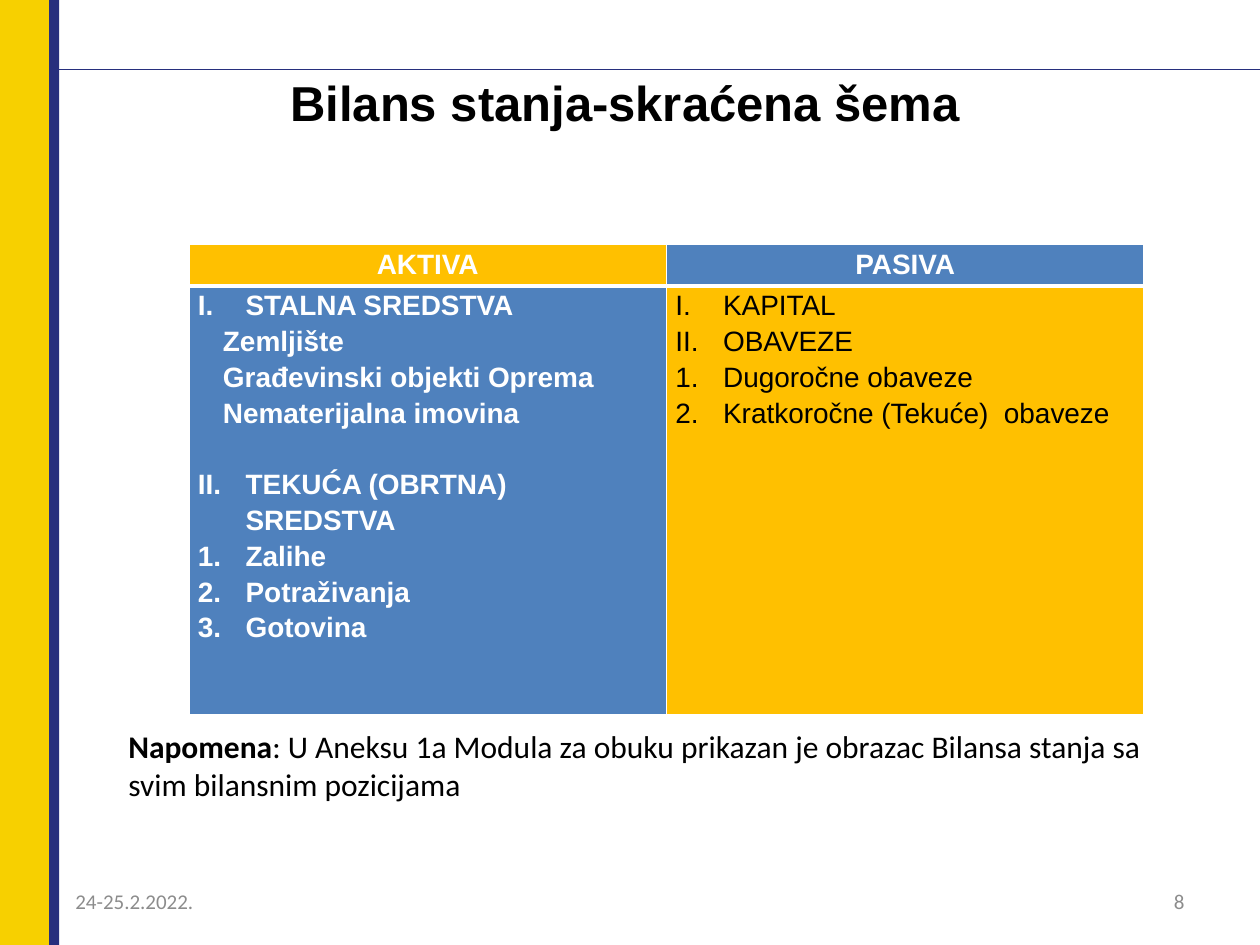
from lxml.etree import SubElement
from pptx import Presentation
from pptx.dml.color import RGBColor
from pptx.enum.shapes import MSO_CONNECTOR, MSO_SHAPE
from pptx.enum.text import MSO_ANCHOR, PP_ALIGN
from pptx.oxml.ns import qn
from pptx.util import Inches, Pt

YELLOW = RGBColor(0xF7, 0xD0, 0x00)
NAVY = RGBColor(0x27, 0x2F, 0x7D)
GOLD = RGBColor(0xFF, 0xC0, 0x00)
BLUE = RGBColor(0x4F, 0x81, 0xBD)
WHITE = RGBColor(0xFF, 0xFF, 0xFF)
BLACK = RGBColor(0, 0, 0)
GREY = RGBColor(0x8C, 0x8C, 0x8C)

ROMAN, ARABIC = "romanUcPeriod", "arabicPeriod"
# Each item: text, numbering scheme, number
ASSETS = [
    ("STALNA SREDSTVA", ROMAN, 1),
    ("Zemljište", None, None),
    ("Građevinski objekti Oprema", None, None),
    ("Nematerijalna imovina", None, None),
    ("TEKUĆA (OBRTNA) SREDSTVA", ROMAN, 2),
    ("Zalihe", ARABIC, 1),
    ("Potraživanja", ARABIC, 2),
    ("Gotovina", ARABIC, 3),
]
LIABILITIES = [
    ("KAPITAL", ROMAN, 1),
    ("OBAVEZE", ROMAN, 2),
    ("Dugoročne obaveze", ARABIC, 1),
    ("Kratkoročne (Tekuće)  obaveze", ARABIC, 2),
]


def add_run(p, text, font, size, color, bold=False):
    r = p.add_run()
    r.text = text
    r.font.name, r.font.size, r.font.bold = font, Pt(size), bold
    r.font.color.rgb = color


def add_frame(s):
    """Coloured side bands and the rule across the top."""
    for left, width, color in ((0, 0.39, YELLOW), (0.39, 0.08, NAVY)):
        band = s.shapes.add_shape(MSO_SHAPE.RECTANGLE, Inches(left), 0,
                                  Inches(width), Inches(7.5))
        band.shadow.inherit = False
        band.fill.solid()
        band.fill.fore_color.rgb = color
        band.line.fill.background()
    rule = s.shapes.add_connector(MSO_CONNECTOR.STRAIGHT, Inches(0.39),
                                  Inches(0.55), Inches(10), Inches(0.55))
    rule.line.color.rgb = NAVY
    rule.line.width = Pt(0.75)
    SubElement(rule._element.spPr, qn("a:effectLst"))


def add_title(s, left, top, width, height):
    title = s.shapes.title
    title.left, title.top = Inches(left), Inches(top)
    title.width, title.height = Inches(width), Inches(height)
    tf = title.text_frame
    tf.vertical_anchor = MSO_ANCHOR.MIDDLE
    p = tf.paragraphs[0]
    p.alignment = PP_ALIGN.CENTER
    add_run(p, "Bilans stanja-skraćena šema", "Arial", 28, BLACK, True)


def style_cell(cell, fill, top, bottom):
    """Set margins, white borders (top and bottom in points) and fill."""
    cell.margin_left = cell.margin_right = Inches(0.07)
    cell.margin_top = cell.margin_bottom = 0
    tcPr = cell._tc.get_or_add_tcPr()
    for side, width in (("L", 1), ("R", 1), ("T", top), ("B", bottom)):
        ln = SubElement(tcPr, qn(f"a:ln{side}"), w=str(Pt(width)))
        color = SubElement(ln, qn("a:solidFill"))
        SubElement(color, qn("a:srgbClr"), val=str(WHITE))
    cell.fill.solid()
    cell.fill.fore_color.rgb = fill


def indent(p, margin, first=0):
    pPr = p._p.get_or_add_pPr()
    pPr.set("marL", str(Inches(margin)))
    pPr.set("indent", str(Inches(first)))
    return pPr


def fill_list(tf, items, color, bold):
    for i, (text, scheme, number) in enumerate(items):
        p = tf.paragraphs[0] if i == 0 else tf.add_paragraph()
        p.line_spacing = 1.15
        if scheme:
            pPr = indent(p, 0.38, -0.38)
            if i and items[i - 1][1] is None:
                p.space_before = Pt(20.5)
            bullet = SubElement(pPr, qn("a:buAutoNum"), type=scheme)
            if scheme == ROMAN and number > 1 and items[i - 1][1] != ROMAN:
                bullet.set("startAt", str(number))
        else:
            indent(p, 0.2)
        add_run(p, text, "Arial", 16, color, bold)


def add_balance_table(s, left, top, width, height):
    table = s.shapes.add_table(2, 2, Inches(left), Inches(top),
                               Inches(width), Inches(height)).table
    table.rows[0].height = Inches(0.33)
    table.rows[1].height = Inches(height - 0.33)
    columns = (("AKTIVA", GOLD, ASSETS, BLUE, WHITE, True),
               ("PASIVA", BLUE, LIABILITIES, GOLD, BLACK, False))
    for c, (name, head_fill, items, fill, color, bold) in enumerate(columns):
        table.columns[c].width = Inches(width / 2)
        head, body = table.cell(0, c), table.cell(1, c)
        style_cell(head, head_fill, 1, 3)
        p = head.text_frame.paragraphs[0]
        p.alignment = PP_ALIGN.CENTER
        p.line_spacing = 1.15
        add_run(p, name, "Arial", 16, WHITE, True)
        style_cell(body, fill, 3, 1)
        fill_list(body.text_frame, items, color, bold)


def add_text(s, left, top, width, height, runs, size, color,
             align=PP_ALIGN.LEFT, anchor=MSO_ANCHOR.TOP):
    box = s.shapes.add_textbox(Inches(left), Inches(top),
                               Inches(width), Inches(height))
    tf = box.text_frame
    tf.word_wrap = True
    tf.vertical_anchor = anchor
    p = tf.paragraphs[0]
    p.alignment = align
    for text, bold in runs:
        add_run(p, text, "Calibri", size, color, bold)


def add_footer(s, top, height):
    for left, text, align in ((0.5, "24-25.2.2022.", PP_ALIGN.LEFT),
                              (7.17, "8", PP_ALIGN.RIGHT)):
        add_text(s, left, top, 2.33, height, [(text, False)], 12, GREY,
                 align, MSO_ANCHOR.MIDDLE)


def main():
    prs = Presentation()
    prs.slide_width, prs.slide_height = Inches(10), Inches(7.5)
    s = prs.slides.add_slide(prs.slide_layouts[5])
    add_title(s, 0.5, 0.45, 8.92, 0.72)
    add_frame(s)
    add_balance_table(s, 1.5, 1.94, 7.58, 3.73)
    note = [("Napomena", True),
            (": U Aneksu 1a Modula za obuku prikazan je obrazac Bilansa "
             "stanja sa svim bilansnim pozicijama", False)]
    add_text(s, 0.92, 5.72, 8.42, 0.71, note, 18, BLACK)
    add_footer(s, 6.95, 0.4)
    prs.save("out.pptx")


if __name__ == "__main__":
    main()
